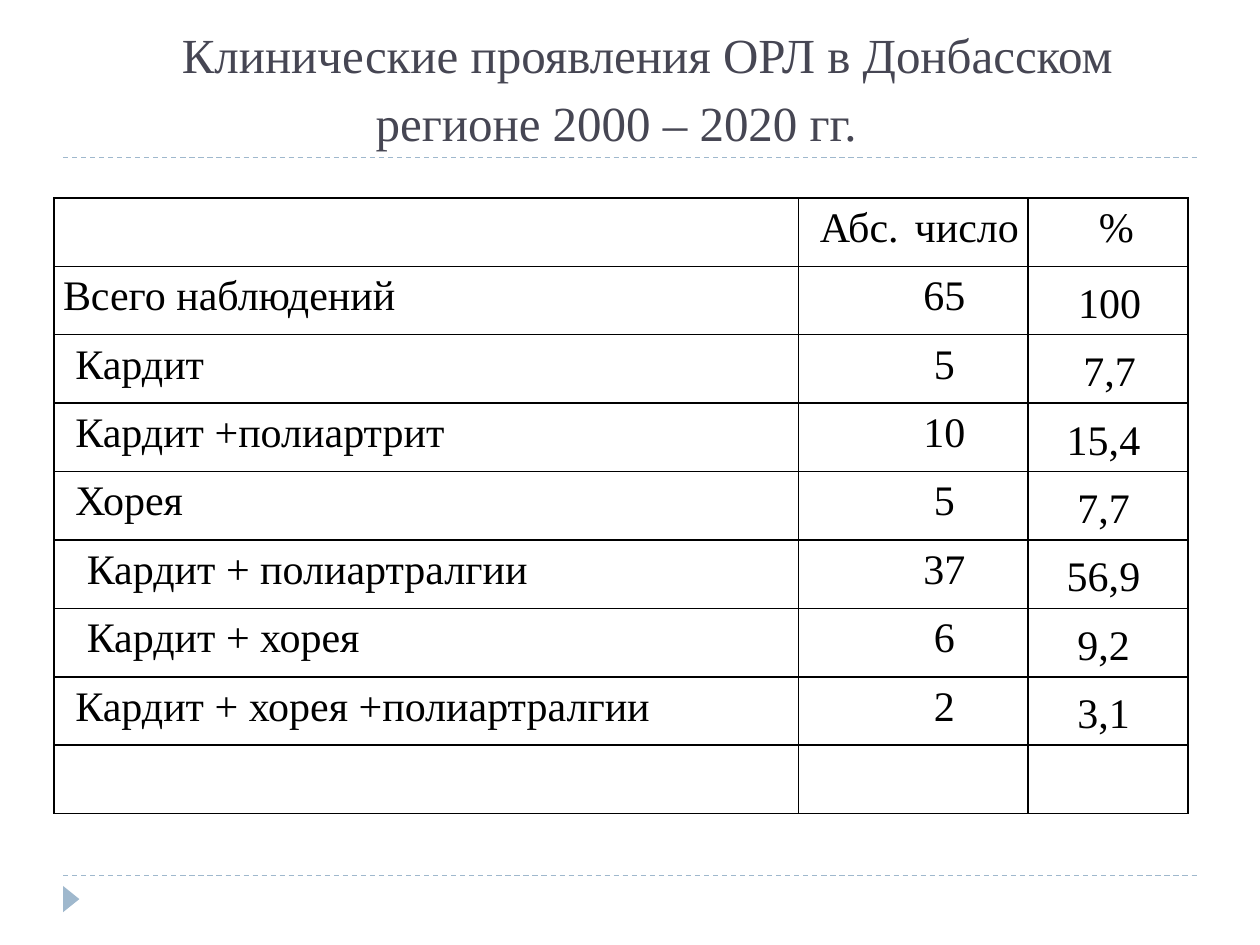
"""Build a slide with a table of clinical manifestations of rheumatic fever."""
from dataclasses import dataclass

from lxml import etree
from pptx import Presentation
from pptx.dml.color import RGBColor
from pptx.enum.dml import MSO_LINE
from pptx.enum.shapes import MSO_CONNECTOR, MSO_SHAPE
from pptx.enum.text import MSO_ANCHOR, MSO_AUTO_SIZE, PP_ALIGN
from pptx.oxml.ns import qn
from pptx.util import Cm, Pt

STRAIGHT = MSO_CONNECTOR.STRAIGHT
TRIANGLE = MSO_SHAPE.ISOSCELES_TRIANGLE
DASH = MSO_LINE.DASH
TOP, MIDDLE, BOTTOM = MSO_ANCHOR.TOP, MSO_ANCHOR.MIDDLE, MSO_ANCHOR.BOTTOM
CENTER, JUSTIFY = PP_ALIGN.CENTER, PP_ALIGN.JUSTIFY
NO_AUTOFIT = MSO_AUTO_SIZE.NONE

COLORS = {"title": "464653", "text": "000000", "border": "000000", "accent": "9FB8CD"}
FONT = "Times New Roman"
SMALL, MEDIUM, WIDE = 0.25, 0.48, 1.25
COLUMN_WIDTHS = (15.01, 4.62, 3.23)
ROW_HEIGHT = 1.38


@dataclass
class Finding:
    """One table row, with the first-line indents of its label and percentage in cm."""
    label: str
    count: str
    percent: str
    label_indent: float = SMALL
    percent_indent: float = 0


FINDINGS = (
    Finding("Всего наблюдений", "65", "100", 0, SMALL),
    Finding("Кардит", "5", "7,7", SMALL, SMALL),
    Finding("Кардит +полиартрит", "10", "15,4"),
    Finding("Хорея", "5", "7,7"),
    Finding("Кардит + полиартралгии", "37", "56,9", MEDIUM),
    Finding("Кардит + хорея", "6", "9,2", MEDIUM),
    Finding("Кардит + хорея +полиартралгии", "2", "3,1"),
)


def color(name: str) -> RGBColor:
    """Return a named colour."""
    return RGBColor.from_string(COLORS[name])


def write(frame, text: str, size: int, tint: str, align, indent: float) -> None:
    """Put one formatted paragraph into a text frame."""
    frame.text = text
    para = frame.paragraphs[0]
    para.alignment = align
    para.line_spacing = 1.15
    properties = para._p.get_or_add_pPr()
    properties.set("marL", "0")
    properties.set("indent", str(int(Cm(indent))))
    for span in para.runs:
        span.font.name = FONT
        span.font.size = Pt(size)
        span.font.color.rgb = color(tint)


def add_title(page) -> None:
    """Fill and place the title placeholder."""
    title = page.shapes.title
    title.left, title.top, title.width, title.height = Cm(0.71), Cm(0.43), Cm(23.42), Cm(2.74)
    frame = title.text_frame
    frame.auto_size = NO_AUTOFIT
    frame.vertical_anchor = BOTTOM
    write(frame, "Клинические проявления ОРЛ в Донбасском регионе 2000 – 2020 гг.",
          28, "title", CENTER, WIDE)


def add_rule(page, top: float) -> None:
    """Draw a dashed line across the page."""
    rule = page.shapes.add_connector(STRAIGHT, Cm(1.27), Cm(top), Cm(24.13), Cm(top))
    rule.line.color.rgb = color("accent")
    rule.line.width = Pt(0.75)
    rule.line.dash_style = DASH
    etree.SubElement(rule._element.spPr, qn("a:effectLst"))


def add_marker(page) -> None:
    """Draw the triangle in the footer."""
    marker = page.shapes.add_shape(TRIANGLE, Cm(1.17), Cm(17.96), Cm(0.53), Cm(0.33))
    marker.rotation = 90
    marker.shadow.inherit = False
    marker.fill.solid()
    marker.fill.fore_color.rgb = color("accent")
    marker.line.fill.background()


def add_borders(cell) -> None:
    """Frame a table cell on all four sides."""
    properties = cell._tc.get_or_add_tcPr()
    for position, side in enumerate(("lnL", "lnR", "lnT", "lnB")):
        border = etree.Element(qn(f"a:{side}"), w=str(int(Pt(1))))
        fill = etree.SubElement(border, qn("a:solidFill"))
        etree.SubElement(fill, qn("a:srgbClr"), val=COLORS["border"])
        properties.insert(position, border)


def fill_cell(cell, text: str, align, indent: float, anchor=TOP, left: float = 0.18) -> None:
    """Write text into a table cell."""
    cell.margin_left, cell.margin_right = Cm(left), Cm(0.18)
    cell.margin_top = cell.margin_bottom = 0
    cell.vertical_anchor = anchor
    write(cell.text_frame, text, 24, "text", align, indent)


def add_findings(page) -> None:
    """Draw the table with a header, the findings and a blank last row."""
    row_count = len(FINDINGS) + 2
    table = page.shapes.add_table(row_count, len(COLUMN_WIDTHS), Cm(1.09), Cm(3.99),
                                  Cm(sum(COLUMN_WIDTHS)), Cm(ROW_HEIGHT * row_count)).table
    table.first_row = table.horz_banding = False
    for column, width in zip(table.columns, COLUMN_WIDTHS):
        column.width = Cm(width)
    for row in table.rows:
        row.height = Cm(ROW_HEIGHT)
    for cell in table.iter_cells():
        cell.fill.background()
        add_borders(cell)
    fill_cell(table.cell(0, 1), "Абс. число ", JUSTIFY, SMALL)
    fill_cell(table.cell(0, 2), "%", JUSTIFY, WIDE)
    for index, finding in enumerate(FINDINGS, start=1):
        fill_cell(table.cell(index, 0), finding.label, JUSTIFY, finding.label_indent)
        fill_cell(table.cell(index, 1), finding.count, CENTER, WIDE)
        fill_cell(table.cell(index, 2), finding.percent, CENTER,
                  finding.percent_indent, MIDDLE, 0)


def main() -> None:
    """Build and save the deck."""
    deck = Presentation()
    deck.slide_width, deck.slide_height = Cm(25.4), Cm(19.05)
    page = deck.slides.add_slide(deck.slide_layouts[5])
    for top in (17.65, 3.17):
        add_rule(page, top)
    add_marker(page)
    add_title(page)
    add_findings(page)
    deck.save("out.pptx")


if __name__ == "__main__":
    main()
